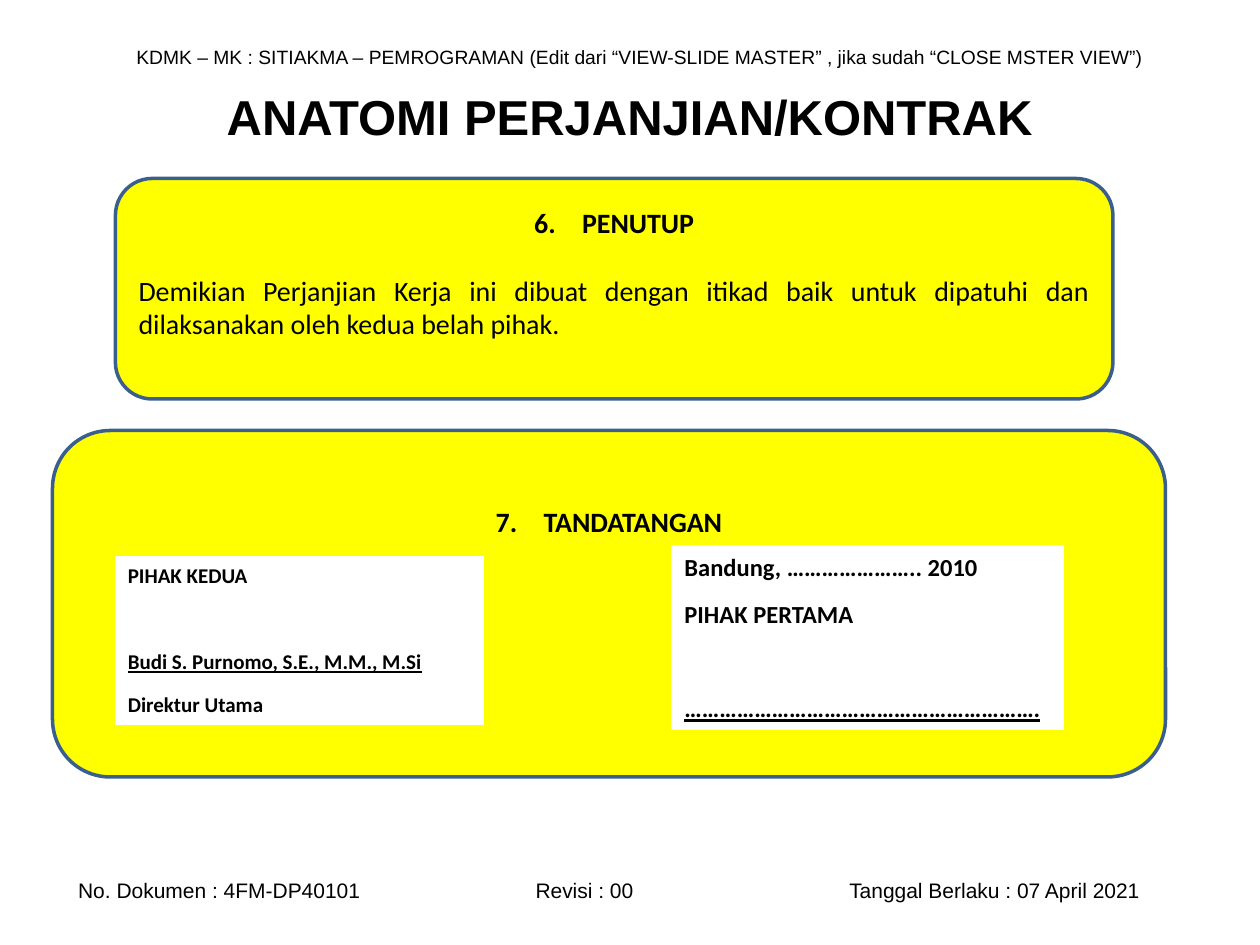
import pptx
import pptx.dml.color
import pptx.enum.shapes
import pptx.enum.text
import pptx.oxml.ns
import pptx.util
from lxml import etree

COLUMNS, ROWS = 120, 90
WIDTH, HEIGHT = pptx.util.Inches(10), pptx.util.Inches(7.5)
BLACK, WHITE, YELLOW, BLUE = "000000", "FFFFFF", "FFFF00", "3A5F8C"
ALIGN = pptx.enum.text.PP_ALIGN
ANCHOR = pptx.enum.text.MSO_ANCHOR
SHAPE = pptx.enum.shapes.MSO_SHAPE


def color(value):
    return pptx.dml.color.RGBColor.from_string(value)


def place(box):
    """Turn a box of grid columns and rows into slide lengths."""
    left, top, width, height = box
    return (round(left * WIDTH / COLUMNS), round(top * HEIGHT / ROWS),
            round(width * WIDTH / COLUMNS), round(height * HEIGHT / ROWS))


def inside(box, part):
    """Shift a part given relative to a box onto the slide grid."""
    return (box[0] + part[0], box[1] + part[1], part[2], part[3])


def add_element(parent, tag, **attributes):
    element = etree.SubElement(parent, pptx.oxml.ns.qn(tag))
    for name, value in attributes.items():
        element.set(name, str(value))
    return element


def add_run(paragraph, text, size, font="Calibri", bold=False, underline=False):
    run = paragraph.add_run()
    run.text = text
    run.font.size = pptx.util.Pt(size)
    run.font.name = font
    run.font.bold = bold
    run.font.underline = underline
    run.font.color.rgb = color(BLACK)


def add_box(slide, kind, box, fill, line, line_width):
    shape = slide.shapes.add_shape(kind, *place(box))
    shape.shadow.inherit = False
    shape.fill.solid()
    shape.fill.fore_color.rgb = color(fill)
    shape.line.color.rgb = color(line)
    shape.line.width = pptx.util.Pt(line_width)
    shape.text_frame.word_wrap = True
    shape.text_frame.vertical_anchor = ANCHOR.TOP
    return shape


def add_title(slide, box, text):
    title = slide.shapes.title
    title.left, title.top, title.width, title.height = place(box)
    title.text_frame.vertical_anchor = ANCHOR.MIDDLE
    paragraph = title.text_frame.paragraphs[0]
    paragraph.alignment = ALIGN.CENTER
    add_run(paragraph, text, 28, "Arial", bold=True)


def add_document_line(slide, box, parts, size, inset=0.1, tabs=()):
    """Write one line of Arial text, its parts set apart by tab stops."""
    frame = slide.shapes.add_textbox(*place(box)).text_frame
    frame.word_wrap = True
    frame.vertical_anchor = ANCHOR.MIDDLE
    frame.margin_left = pptx.util.Inches(inset)
    paragraph = frame.paragraphs[0]
    if tabs:
        tab_list = add_element(paragraph._p.get_or_add_pPr(), "a:tabLst")
        for position in tabs:
            add_element(tab_list, "a:tab", pos=pptx.util.Inches(position), algn="l")
    add_run(paragraph, "\t".join(parts), size, "Arial")


def add_clause(slide, box, number, heading, top_inset, body=None):
    """Draw a yellow panel with a numbered heading and optional body text."""
    panel = add_box(slide, SHAPE.FLOWCHART_ALTERNATE_PROCESS, box, YELLOW, BLUE, 2)
    frame = panel.text_frame
    frame.margin_top = pptx.util.Inches(top_inset)
    paragraph = frame.paragraphs[0]
    paragraph.alignment = ALIGN.CENTER
    properties = paragraph._p.get_or_add_pPr()
    indent = pptx.util.Inches(0.38)
    properties.set("marL", str(indent))
    properties.set("indent", str(-indent))
    add_element(properties, "a:buFont", typeface="+mj-lt")
    add_element(properties, "a:buAutoNum", type="arabicPeriod", startAt=number)
    add_run(paragraph, heading, 16, bold=True)
    if body:
        paragraph = frame.add_paragraph()
        paragraph.alignment = ALIGN.JUSTIFY
        paragraph.space_before = pptx.util.Pt(19.5)
        add_run(paragraph, body, 16)


def add_signature(slide, box, size, lines, name_index):
    """Draw a white card, leaving room to sign above the underlined name."""
    frame = add_box(slide, SHAPE.RECTANGLE, box, WHITE, WHITE, 0.75).text_frame
    for index, text in enumerate(lines):
        paragraph = frame.add_paragraph() if index else frame.paragraphs[0]
        paragraph.alignment = ALIGN.LEFT
        paragraph.space_after = pptx.util.Pt(10)
        if index == name_index:
            paragraph.space_before = pptx.util.Pt(size * 1.22 + 10)
        add_run(paragraph, text, size, bold=True, underline=index == name_index)


def add_signing_panel(slide, box):
    add_clause(slide, box, 7, "TANDATANGAN", 0.45)
    add_signature(slide, inside(box, (6, 12, 35, 16)), 12,
                  ["PIHAK KEDUA", "Budi S. Purnomo, S.E., M.M., M.Si", "Direktur Utama"], 1)
    add_signature(slide, inside(box, (59, 11, 37.3, 17.5)), 14,
                  ["Bandung, ………………….. 2010", "PIHAK PERTAMA",
                   "……………………………………………………."], 2)


def main():
    presentation = pptx.Presentation()
    presentation.slide_width, presentation.slide_height = WIDTH, HEIGHT
    slide = presentation.slides.add_slide(presentation.slide_layouts[5])
    add_document_line(slide, (11.8, 3.7, 101.2, 3.5),
                      ["KDMK – MK : SITIAKMA – PEMROGRAMAN (Edit dari “VIEW-SLIDE MASTER” , "
                       "jika sudah “CLOSE MSTER VIEW”)"], 11)
    add_document_line(slide, (2.4, 83, 113.4, 3.6),
                      ["No. Dokumen : 4FM-DP40101", "Revisi : 00",
                       "Tanggal Berlaku : 07 April 2021"], 12, 0.42, (3.63, 6.12))
    add_title(slide, (13.2, 5, 93.5, 12.1), "ANATOMI PERJANJIAN/KONTRAK")
    add_clause(slide, (11, 17, 95, 21), 6, "PENUTUP", 0.13,
               "Demikian Perjanjian Kerja ini dibuat dengan itikad baik untuk dipatuhi "
               "dan dilaksanakan oleh kedua belah pihak.")
    add_signing_panel(slide, (5, 41, 106, 33))
    presentation.save("out.pptx")


if __name__ == "__main__":
    main()
